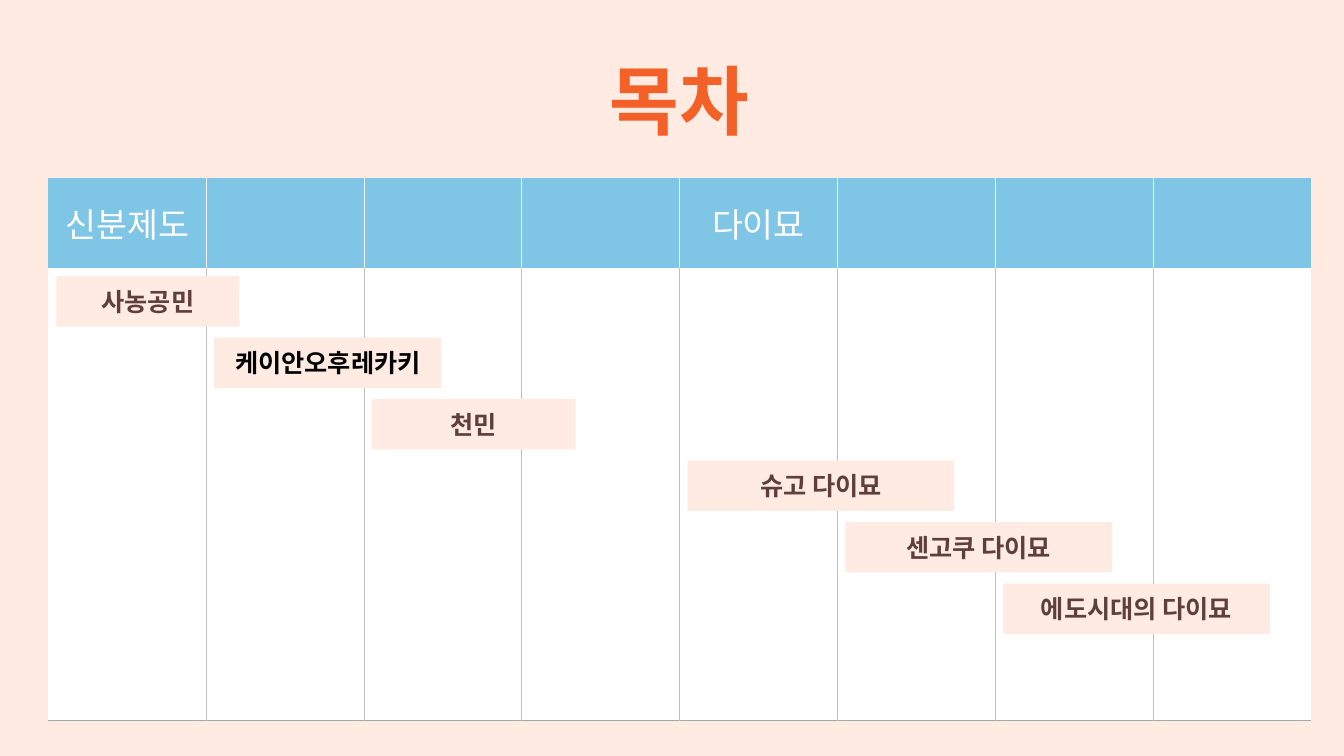
from lxml import etree
from pptx import Presentation
from pptx.dml.color import RGBColor
from pptx.enum.shapes import MSO_SHAPE
from pptx.enum.text import MSO_ANCHOR, PP_ALIGN
from pptx.oxml.ns import qn
from pptx.util import Inches, Pt

RECTANGLE = MSO_SHAPE.RECTANGLE
MIDDLE = MSO_ANCHOR.MIDDLE
CENTER = PP_ALIGN.CENTER

FONT = "Noto Sans CJK KR"
PEACH, ORANGE, BROWN = "FFEBE2", "F46128", "5E3F3A"
BLUE, WHITE, BLACK = "7FC6E6", "FFFFFF", "000000"
HEADER_RULE, BODY_RULE, BOTTOM_RULE = "F2F2F2", "BFBFBF", "A6A6A6"
PLAIN_TABLE = "{2D5ABB26-0587-4C30-8999-92F81FD0307C}"
TITLE_ONLY = 5

# Grid of the timetable, in inches
COLUMNS = 8
GRID_LEFT, GRID_TOP, GRID_WIDTH = 0.48, 1.77, 12.52
COLUMN = GRID_WIDTH / COLUMNS
HEADER_HEIGHT, BODY_HEIGHT = 0.89, 4.49
BAR_INSET, BAR_HEIGHT, BAR_PITCH = 0.08, 0.5, 0.61

HEADINGS = {0: "신분제도", 4: "다이묘"}
# Text, starting column, width in columns, text colour
TOPICS = [
    ("사농공민", 0, 1.16, BROWN),
    ("케이안오후레카키", 1, 1.44, BLACK),
    ("천민", 2, 1.29, BROWN),
    ("슈고 다이묘", 4, 1.69, BROWN),
    ("센고쿠 다이묘", 5, 1.69, BROWN),
    ("에도시대의 다이묘", 6, 1.69, BROWN),
]


def color(hex_text):
    return RGBColor.from_string(hex_text)


def paint(target, hex_text):
    target.fill.solid()
    target.fill.fore_color.rgb = color(hex_text)


def rule_cell(cell, side, hex_text, points):
    """Draw one border (L, R, T or B); call in that order, before the fill."""
    properties = cell._tc.get_or_add_tcPr()
    line = etree.SubElement(properties, qn(f"a:ln{side}"), w=str(Pt(points)))
    solid = etree.SubElement(line, qn("a:solidFill"))
    etree.SubElement(solid, qn("a:srgbClr"), val=hex_text)


class Page:
    def __init__(self, deck):
        self.slide = deck.slides.add_slide(deck.slide_layouts[TITLE_ONLY])
        paint(self.slide.background, PEACH)

    def set_text(self, frame, text, size, hex_text, bold=False):
        frame.text = text
        para = frame.paragraphs[0]
        para.alignment = CENTER
        span = para.runs[0]
        font = span.font
        font.name, font.size, font.bold = FONT, Pt(size), bold
        font.color.rgb = color(hex_text)
        properties = span._r.get_or_add_rPr()
        etree.SubElement(properties, qn("a:ea"), typeface=FONT)

    def title(self, text):
        box = self.slide.shapes.title
        box.left, box.top = Inches(5.52), Inches(0.48)
        box.width, box.height = Inches(2.44), Inches(1.01)
        box.text_frame.vertical_anchor = MIDDLE
        self.set_text(box.text_frame, text, 54, ORANGE, bold=True)

    def timetable(self, headings):
        frame = self.slide.shapes.add_table(
            2, COLUMNS, Inches(GRID_LEFT), Inches(GRID_TOP),
            Inches(GRID_WIDTH), Inches(HEADER_HEIGHT + BODY_HEIGHT))
        table = frame.table
        table._tbl.tblPr.find(qn("a:tableStyleId")).text = PLAIN_TABLE
        table.rows[0].height = Inches(HEADER_HEIGHT)
        table.rows[1].height = Inches(BODY_HEIGHT)
        for column in range(COLUMNS):
            header, body = table.cell(0, column), table.cell(1, column)
            for cell, rule in ((header, HEADER_RULE), (body, BODY_RULE)):
                if column > 0:
                    rule_cell(cell, "L", rule, 0.5)
                if column < COLUMNS - 1:
                    rule_cell(cell, "R", rule, 0.5)
            rule_cell(body, "B", BOTTOM_RULE, 0.75)
            paint(header, BLUE)
            paint(body, WHITE)
            if column in headings:
                header.vertical_anchor = MIDDLE
                self.set_text(header.text_frame, headings[column], 24, WHITE)

    def bar(self, step, text, column, span, hex_text):
        """Place a topic bar; step counts down from the table header."""
        left = GRID_LEFT + column * COLUMN + BAR_INSET
        top = GRID_TOP + HEADER_HEIGHT + BAR_INSET + step * BAR_PITCH
        box = self.slide.shapes.add_shape(
            RECTANGLE, Inches(left), Inches(top),
            Inches(span * COLUMN), Inches(BAR_HEIGHT))
        box.shadow.inherit = False
        paint(box, PEACH)
        box.line.fill.background()
        box.text_frame.vertical_anchor = MIDDLE
        self.set_text(box.text_frame, text, 18, hex_text, bold=True)


def main():
    deck = Presentation()
    deck.slide_width, deck.slide_height = Inches(13.33), Inches(7.5)
    page = Page(deck)
    page.title("목차")
    page.timetable(HEADINGS)
    for step, topic in enumerate(TOPICS):
        page.bar(step, *topic)
    deck.save("out.pptx")


if __name__ == "__main__":
    main()
